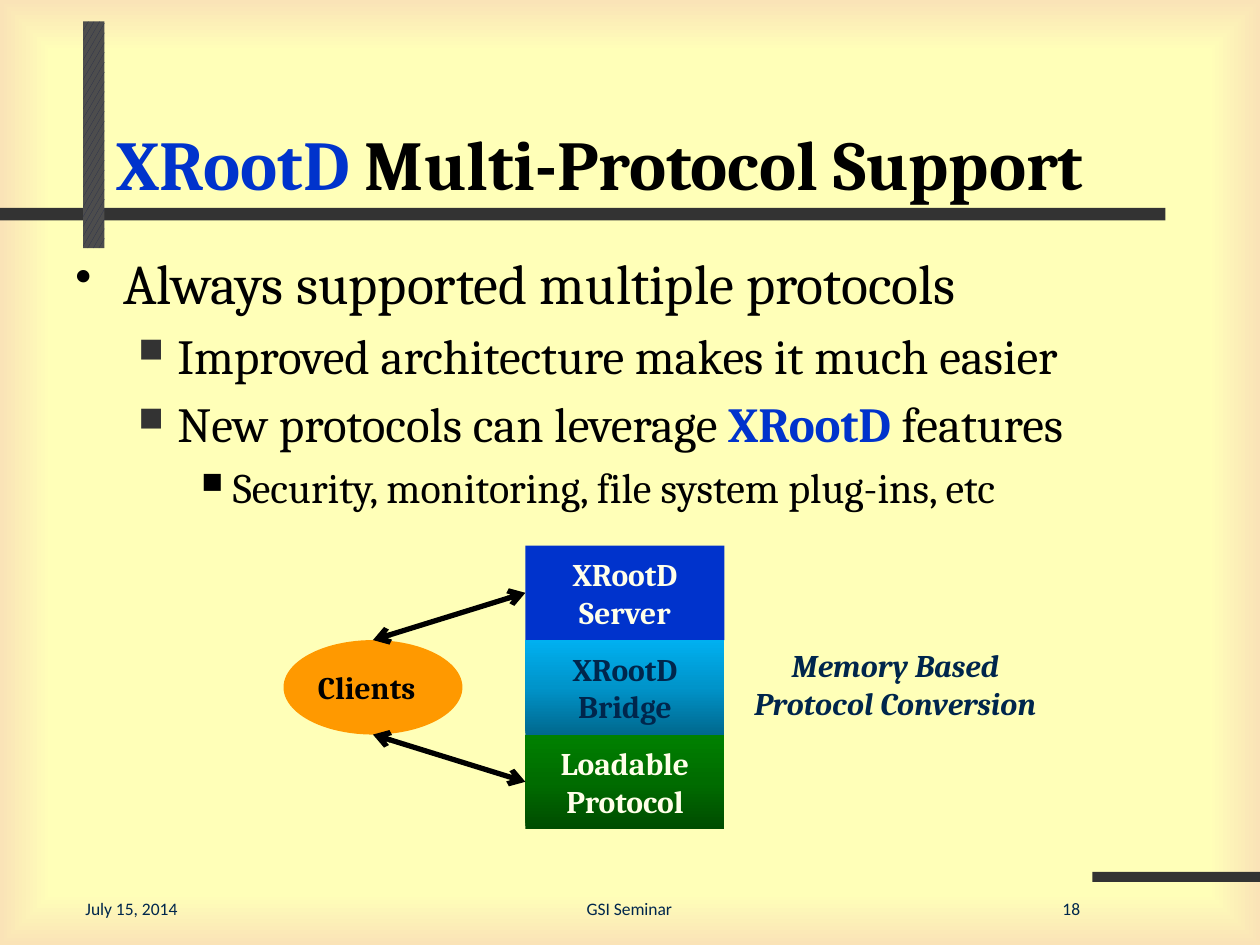
"""Build the multi-protocol support slide."""
from dataclasses import dataclass
from typing import Any, Optional

from lxml.etree import SubElement
from pptx import Presentation
from pptx.dml.color import RGBColor
from pptx.enum.dml import MSO_PATTERN
from pptx.enum.shapes import MSO_CONNECTOR, MSO_SHAPE
from pptx.enum.text import MSO_ANCHOR, PP_ALIGN
from pptx.oxml.ns import qn
from pptx.util import Inches, Pt

COLORS = {
    "black": "000000", "ink": "00264C", "cream": "FFFFE9", "blue": "0033CC",
    "rule": "333333", "orange": "FF9900", "paper": "FFFFB8", "edge": "FAE3B7",
    "weave": "262D4C", "post": "4D4D4D",
}
SKY = [(0, "00688E", 100), (50, "0094CA", 100), (100, "00B0F0", 100)]
FOREST = [(0, "004C00", 100), (50, "006C00", 100), (100, "008000", 100)]
PAPER = [(73, COLORS["paper"], 60), (89, COLORS["paper"], 60), (100, COLORS["edge"], 100)]

LABEL = {"name": "Cambria", "size": Pt(18), "bold": True}
NOTE = {**LABEL, "italic": True}
TITLE = {"name": "Cambria", "size": Pt(40), "bold": True}
FOOTER = {"name": "Calibri", "size": Pt(10)}


@dataclass
class Span:
    text: str
    color: str = "black"
    bold: bool = False


@dataclass
class Level:
    size: int
    margin: float
    hang: float
    bullet: str
    bullet_size: int
    bullet_color: Optional[str] = None


@dataclass
class Layer:
    label: list[str]
    text_color: str
    fill: Any


@dataclass
class Caption:
    lines: list[str]
    box: tuple[float, float, float, float]
    style: dict[str, Any]
    align: PP_ALIGN


LEVELS = [
    Level(32, 0.38, 0.38, "•", 85),
    Level(28, 0.81, 0.31, "■", 70, "rule"),
    Level(24, 1.25, 0.25, "■", 70),
]
OUTLINE = [
    (0, [Span("Always supported multiple protocols")]),
    (1, [Span("Improved architecture makes it much easier")]),
    (1, [Span("New protocols can leverage "), Span("XRootD ", "blue", True), Span("features")]),
    (2, [Span("Security, monitoring, file system plug-ins, etc")]),
]
RULES = [(0, 1.65, 9.25, 0.1), (8.67, 6.92, 1.33, 0.08)]
POST = (0.66, 0.17, 0.17, 1.8)
LAYERS = [
    Layer(["XRootD", "Server"], "cream", "blue"),
    Layer(["XRootD", "Bridge"], "ink", SKY),
    Layer(["Loadable", "Protocol"], "cream", FOREST),
]
STACK_LEFT, STACK_TOP, LAYER_WIDTH, LAYER_HEIGHT = 4.17, 4.33, 1.58, 0.75
CLIENTS = (2.25, 5.08, 1.42, 0.75)
CAPTIONS = [
    Caption(["July 15, 2014"], (0.58, 7.08, 1.92, 0.27), FOOTER, PP_ALIGN.LEFT),
    Caption(["18"], (7.75, 7.08, 0.92, 0.27), FOOTER, PP_ALIGN.RIGHT),
    Caption(["GSI Seminar"], (3.83, 7.08, 2.33, 0.27), FOOTER, PP_ALIGN.CENTER),
    Caption(["Memory Based", "Protocol Conversion"], (5.83, 5.08, 2.55, 0.71), NOTE, PP_ALIGN.CENTER),
]


def rgb(color: str) -> RGBColor:
    """Return the named palette colour."""
    return RGBColor.from_string(COLORS[color])


def add_span(paragraph, text: str, color: str, style: dict[str, Any]) -> None:
    """Append a styled run."""
    run = paragraph.add_run()
    run.text = text
    for attribute, value in style.items():
        setattr(run.font, attribute, value)
    run.font.color.rgb = rgb(color)


def write_lines(frame, lines: list[str], color: str, style: dict[str, Any], align: PP_ALIGN) -> None:
    """Write one paragraph per line."""
    for index, line in enumerate(lines):
        paragraph = frame.add_paragraph() if index else frame.paragraphs[0]
        paragraph.alignment = align
        add_span(paragraph, line, color, style)


def set_stops(gradient, stops: list[tuple[int, str, int]]) -> None:
    """Replace the stops of a gradient with position, colour and opacity."""
    stop_list = gradient.find(qn("a:gsLst"))
    for old in list(stop_list):
        stop_list.remove(old)
    for position, color, opacity in stops:
        stop = SubElement(stop_list, qn("a:gs"), pos=str(position * 1000))
        tone = SubElement(stop, qn("a:srgbClr"), val=color)
        if opacity < 100:
            SubElement(tone, qn("a:alpha"), val=str(opacity * 1000))


def paint_background(slide) -> None:
    """Fill the slide with a gradient that darkens towards its edges."""
    slide.background.fill.gradient()
    gradient = next(slide.element.iter(qn("a:gradFill")))
    set_stops(gradient, PAPER)
    gradient.remove(gradient.find(qn("a:lin")))
    shading = SubElement(gradient, qn("a:path"))
    shading.set("path", "shape")
    SubElement(shading, qn("a:fillToRect"), l="50000", t="50000", r="50000", b="50000")


def add_block(slide, kind: MSO_SHAPE, box: tuple[float, ...], fill: Any):
    """Add a borderless shape with a solid or gradient fill."""
    block = slide.shapes.add_shape(kind, *map(Inches, box))
    block.shadow.inherit = False
    block.line.fill.background()
    if isinstance(fill, str):
        block.fill.solid()
        block.fill.fore_color.rgb = rgb(fill)
    else:
        block.fill.gradient()
        block.fill.gradient_angle = 90
        set_stops(next(block.element.iter(qn("a:gradFill"))), fill)
    block.text_frame.word_wrap = False
    block.text_frame.vertical_anchor = MSO_ANCHOR.MIDDLE
    return block


def add_frame(slide, box: tuple[float, ...], anchor: MSO_ANCHOR = MSO_ANCHOR.TOP):
    """Add a wrapping text box and return its text frame."""
    frame = slide.shapes.add_textbox(*map(Inches, box)).text_frame
    frame.word_wrap = True
    frame.vertical_anchor = anchor
    return frame


def format_bullet(paragraph, level: Level) -> None:
    """Set the hanging indent and bullet of a paragraph."""
    properties = paragraph._p.get_or_add_pPr()
    properties.set("marL", str(Inches(level.margin)))
    properties.set("indent", str(-Inches(level.hang)))
    if level.bullet_color:
        tint = SubElement(properties, qn("a:buClr"))
        SubElement(tint, qn("a:srgbClr"), val=COLORS[level.bullet_color])
    SubElement(properties, qn("a:buSzPct"), val=str(level.bullet_size * 1000))
    SubElement(properties, qn("a:buChar"), char=level.bullet)


def add_outline(slide) -> None:
    """Write the bulleted outline."""
    frame = add_frame(slide, (0.5, 1.92, 8.92, 2.42))
    for index, (depth, spans) in enumerate(OUTLINE):
        level = LEVELS[depth]
        paragraph = frame.add_paragraph() if index else frame.paragraphs[0]
        paragraph.level = depth
        format_bullet(paragraph, level)
        paragraph.space_before = Pt(level.size * 0.2 if index else 0)
        for span in spans:
            style = {"name": "Cambria", "size": Pt(level.size), "bold": span.bold}
            add_span(paragraph, span.text, span.color, style)


def add_link(slide, start: tuple[float, float], layer) -> None:
    """Draw a two-headed arrow from a point to the left side of a layer."""
    begin = [Inches(value) for value in start]
    link = slide.shapes.add_connector(MSO_CONNECTOR.STRAIGHT, *begin, *begin)
    link.end_connect(layer, 1)
    link.line.color.rgb = rgb("black")
    link.line.width = Pt(3)
    outline = link.line._get_or_add_ln()
    for end in ("a:headEnd", "a:tailEnd"):
        SubElement(outline, qn(end), type="arrow")
    SubElement(link.element.spPr, qn("a:effectLst"))


def main() -> None:
    """Build and save the slide."""
    deck = Presentation()
    deck.slide_width, deck.slide_height = Inches(10), Inches(7.5)
    slide = deck.slides.add_slide(deck.slide_layouts[6])
    paint_background(slide)

    for rule in RULES:
        add_block(slide, MSO_SHAPE.RECTANGLE, rule, "rule")
    post = add_block(slide, MSO_SHAPE.RECTANGLE, POST, "post")
    post.fill.patterned()
    post.fill.pattern = MSO_PATTERN.LARGE_CONFETTI
    post.fill.fore_color.rgb, post.fill.back_color.rgb = rgb("weave"), rgb("post")

    heading = add_frame(slide, (0.83, 0.42, 8.36, 1.25), MSO_ANCHOR.BOTTOM).paragraphs[0]
    add_span(heading, "XRootD ", "blue", TITLE)
    add_span(heading, "Multi-Protocol Support", "black", TITLE)
    add_outline(slide)

    stack = []
    for index, layer in enumerate(LAYERS):
        box = (STACK_LEFT, STACK_TOP + index * LAYER_HEIGHT, LAYER_WIDTH, LAYER_HEIGHT)
        block = add_block(slide, MSO_SHAPE.RECTANGLE, box, layer.fill)
        write_lines(block.text_frame, layer.label, layer.text_color, LABEL, PP_ALIGN.CENTER)
        stack.append(block)

    clients = add_block(slide, MSO_SHAPE.OVAL, CLIENTS, "orange")
    clients.text_frame.margin_right = Inches(0.2)
    write_lines(clients.text_frame, ["Clients"], "black", LABEL, PP_ALIGN.CENTER)
    left, top, width, height = CLIENTS
    add_link(slide, (left + width / 2, top), stack[0])
    add_link(slide, (left + width / 2, top + height), stack[-1])

    for caption in CAPTIONS:
        write_lines(add_frame(slide, caption.box), caption.lines, "ink", caption.style, caption.align)
    deck.save("out.pptx")


if __name__ == "__main__":
    main()
